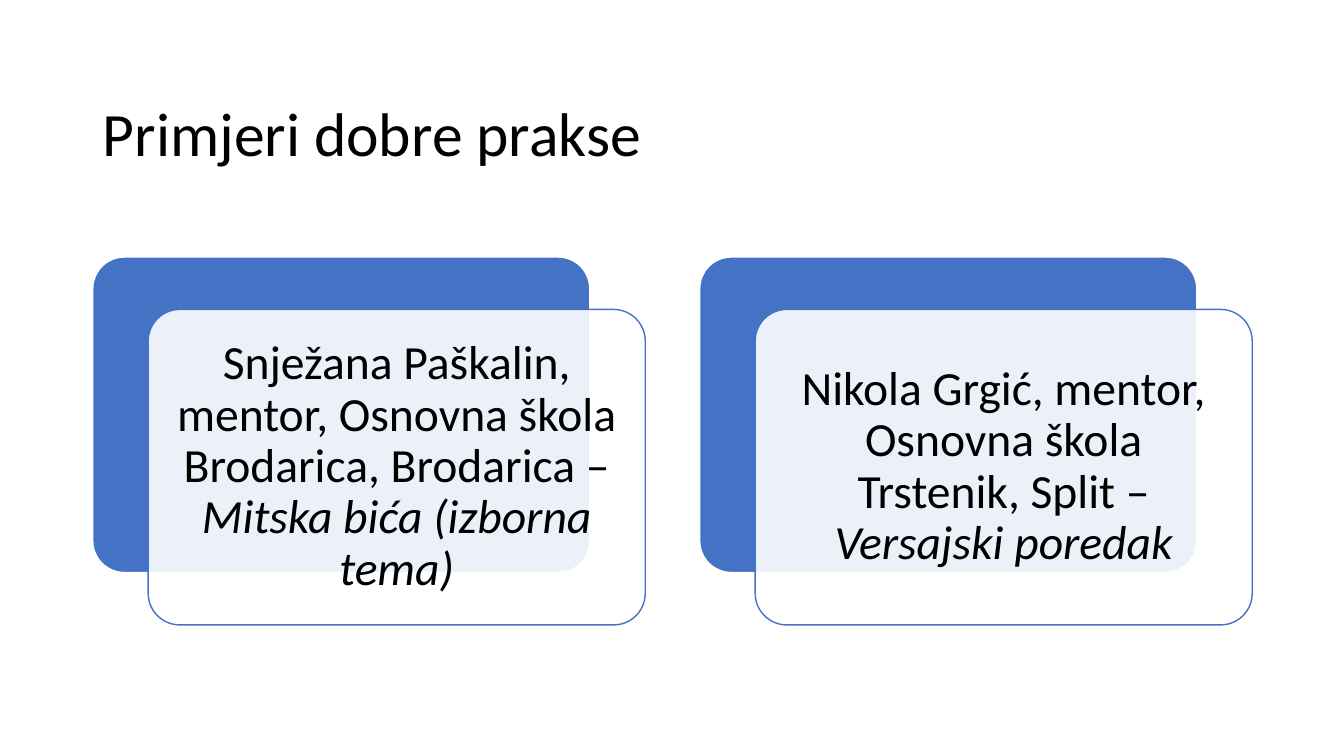
"""Build a title slide with two layered cards naming examples of good practice."""
from dataclasses import dataclass

from lxml import etree
from pptx import Presentation
from pptx.dml.color import RGBColor
from pptx.enum.shapes import MSO_SHAPE
from pptx.enum.text import MSO_ANCHOR, PP_ALIGN
from pptx.oxml.ns import qn
from pptx.util import Inches, Pt

ROUNDED = MSO_SHAPE.ROUNDED_RECTANGLE
MIDDLE = MSO_ANCHOR.MIDDLE
LEFT, CENTER = PP_ALIGN.LEFT, PP_ALIGN.CENTER

TITLE = "Primjeri dobre prakse"
EXAMPLES = [
    ("Snježana Paškalin, mentor, Osnovna škola Brodarica, Brodarica – ",
     "Mitska bića (izborna tema)"),
    ("Nikola Grgić, mentor, Osnovna škola Trstenik, Split – ",
     "Versajski poredak"),
]


@dataclass(frozen=True)
class Theme:
    font: str = "Calibri"
    title_size: int = 44
    body_size: int = 34
    ink: RGBColor = RGBColor(0x00, 0x00, 0x00)
    accent: RGBColor = RGBColor(0x44, 0x72, 0xC4)
    paper: RGBColor = RGBColor(0xFF, 0xFF, 0xFF)


THEME = Theme()
PAGE_WIDTH, PAGE_HEIGHT = 13.33, 7.5
MARGIN = 0.92
TITLE_TOP, TITLE_HEIGHT = 0.63, 1.45
CARD_TOP, CARD_WIDTH, CARD_HEIGHT = 2.55, 4.93, 3.13
COLUMN_STEP = 6.02
OFFSET_X, OFFSET_Y = 0.55, 0.52
CORNER = 0.1
INSET = 0.14
LINE_SPACING = 0.9
FRONT_OPACITY = 90


def add_span(para, text, size, italic=False):
    span = para.add_run()
    span.text = text
    span.font.name = THEME.font
    span.font.size = Pt(size)
    span.font.color.rgb = THEME.ink
    span.font.italic = italic


def start_text(shape, alignment):
    frame = shape.text_frame
    frame.word_wrap = True
    frame.vertical_anchor = MIDDLE
    para = frame.paragraphs[0]
    para.alignment = alignment
    para.line_spacing = LINE_SPACING
    return para


def add_card(page, left, top, fill, outline):
    card = page.shapes.add_shape(ROUNDED, Inches(left), Inches(top),
                                 Inches(CARD_WIDTH), Inches(CARD_HEIGHT))
    card.adjustments[0] = CORNER
    card.shadow.inherit = False
    card.fill.solid()
    card.fill.fore_color.rgb = fill
    card.line.color.rgb = outline
    card.line.width = Pt(1)
    return card


def set_opacity(shape, percent):
    color = shape.fill._xPr.find(qn("a:solidFill"))[0]
    etree.SubElement(color, qn("a:alpha")).set("val", str(percent * 1000))


def add_title(page):
    title = page.shapes.title
    title.left, title.top = Inches(MARGIN), Inches(TITLE_TOP)
    title.width = Inches(PAGE_WIDTH - 2 * MARGIN)
    title.height = Inches(TITLE_HEIGHT)
    add_span(start_text(title, LEFT), TITLE, THEME.title_size)


def add_example(page, column, mentor, topic):
    left = MARGIN + column * COLUMN_STEP
    add_card(page, left, CARD_TOP, THEME.accent, THEME.paper)
    front = add_card(page, left + OFFSET_X, CARD_TOP + OFFSET_Y,
                     THEME.paper, THEME.accent)
    set_opacity(front, FRONT_OPACITY)
    frame = front.text_frame
    frame.margin_left = frame.margin_right = Inches(INSET)
    frame.margin_top = frame.margin_bottom = Inches(INSET)
    para = start_text(front, CENTER)
    add_span(para, mentor, THEME.body_size)
    add_span(para, topic, THEME.body_size, italic=True)


def main():
    deck = Presentation()
    deck.slide_width, deck.slide_height = Inches(PAGE_WIDTH), Inches(PAGE_HEIGHT)
    page = deck.slides.add_slide(deck.slide_layouts.get_by_name("Title Only"))
    add_title(page)
    for column, (mentor, topic) in enumerate(EXAMPLES):
        add_example(page, column, mentor, topic)
    deck.save("out.pptx")


if __name__ == "__main__":
    main()
